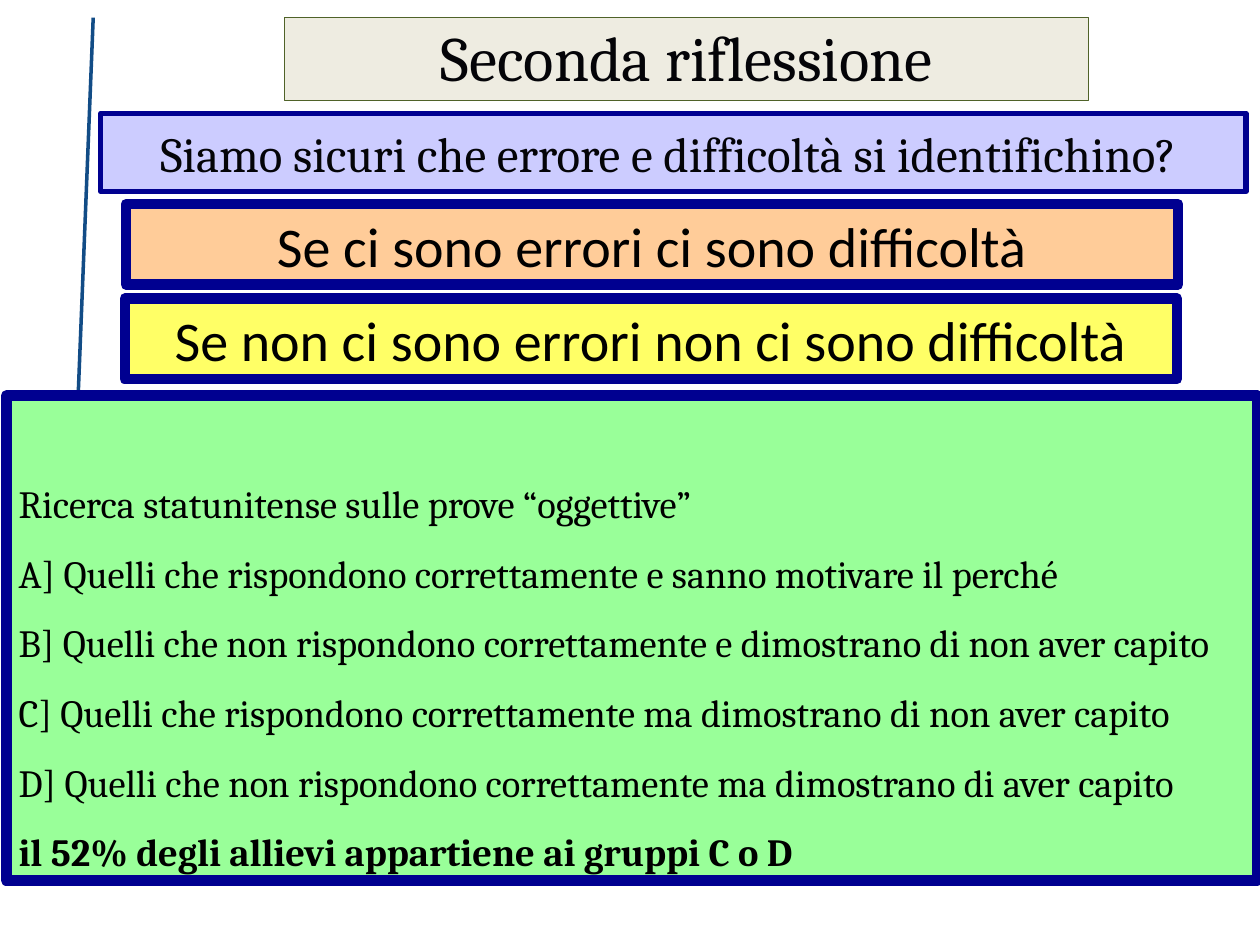
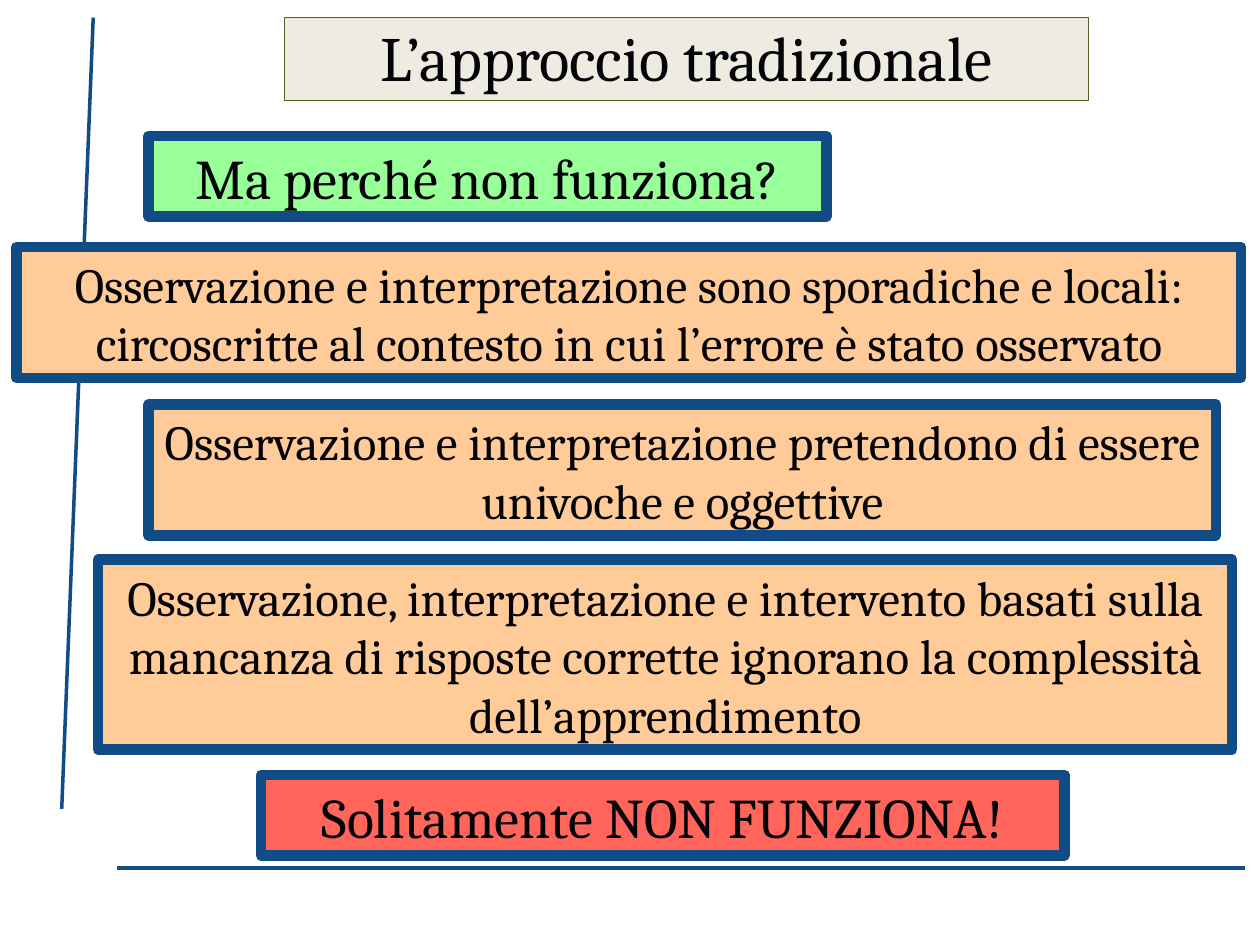
"""Build two slides on errors, difficulties and the traditional approach."""
from lxml import etree
from pptx import Presentation
from pptx.dml.color import RGBColor
from pptx.enum.shapes import MSO_CONNECTOR, MSO_SHAPE
from pptx.enum.text import MSO_ANCHOR, MSO_AUTO_SIZE, PP_ALIGN
from pptx.oxml.ns import qn
from pptx.util import Inches, Pt

RECT, STRAIGHT = MSO_SHAPE.RECTANGLE, MSO_CONNECTOR.STRAIGHT
BOTTOM, MIDDLE = MSO_ANCHOR.BOTTOM, MSO_ANCHOR.MIDDLE
LEFT, CENTER = PP_ALIGN.LEFT, PP_ALIGN.CENTER
NO_FIT = MSO_AUTO_SIZE.NONE

INK, BLACK = "040408", "000000"
NAVY, BLUE, OLIVE = "000090", "124C86", "4F6228"
CREAM, LILAC, PEACH = "EEECE1", "CCCCFF", "FFCC99"
YELLOW, GREEN, RED = "FFFF66", "99FF99", "FF655B"
SERIF, SANS = "Cambria", "Calibri"

TITLE_AT = (2.26, 0.14, 6.38, 0.66)
SIDE_RULE = (0.74, 0.14, 0.49, 6.42)
BASE_RULE = (9.88, 6.89, 0.93, 6.89)

RESEARCH = [
    "Ricerca statunitense sulle prove “oggettive”",
    "A] Quelli che rispondono correttamente e sanno motivare il perché",
    "B] Quelli che non rispondono correttamente e dimostrano di non aver capito",
    "C] Quelli che rispondono correttamente ma dimostrano di non aver capito",
    "D] Quelli che non rispondono correttamente ma dimostrano di aver capito",
    "il 52% degli allievi appartiene ai gruppi C o D",
]

SLIDES = [
    dict(title="Seconda riflessione", rules=[SIDE_RULE], edge=NAVY, boxes=[
        dict(at=(0.8, 0.9, 9.09, 0.62), fill=LILAC, size=28, weight=3, anchor=MIDDLE,
             lines=["Siamo sicuri che errore e difficoltà si identifichino? "]),
        dict(at=(1, 1.62, 8.35, 0.64), fill=PEACH, size=32, font=SANS, color=BLACK,
             lines=["Se ci sono errori ci sono difficoltà"]),
        dict(at=(0.99, 2.37, 8.35, 0.64), fill=YELLOW, size=32, font=SANS, color=BLACK,
             lines=["Se non ci sono errori non ci sono difficoltà"]),
        dict(at=(0.05, 3.14, 9.93, 3.85), fill=GREEN, size=22, color=BLACK,
             align=LEFT, leading=28.8, bold_last=True, lines=RESEARCH),
    ]),
    dict(title="L’approccio tradizionale", rules=[SIDE_RULE, BASE_RULE], edge=BLUE, boxes=[
        dict(at=(1.18, 1.08, 5.38, 0.64), fill=GREEN, size=32,
             lines=["Ma perché non funziona?"]),
        dict(at=(0.13, 1.96, 9.72, 1.04), fill=PEACH, size=28,
             lines=["Osservazione e interpretazione sono sporadiche e locali: "
                    "circoscritte al contesto in cui l’errore è stato osservato"]),
        dict(at=(1.18, 3.21, 8.47, 1.04), fill=PEACH, size=28,
             lines=["Osservazione e interpretazione pretendono di essere "
                    "univoche e oggettive"]),
        dict(at=(0.78, 4.44, 9, 1.51), fill=PEACH, size=28,
             lines=["Osservazione, interpretazione e intervento basati sulla "
                    "mancanza di risposte corrette ignorano la complessità "
                    "dell’apprendimento"]),
        dict(at=(2.07, 6.15, 6.38, 0.64), fill=RED, size=32,
             lines=["Solitamente NON FUNZIONA!"]),
    ]),
]


def rgb(value):
    """Turn a hex string into a colour."""
    return RGBColor.from_string(value)


def add_rule(s, ends):
    """Draw a thin blue rule without a shadow."""
    sp = s.shapes.add_connector(STRAIGHT, *map(Inches, ends))
    sp.line.color.rgb = rgb(BLUE)
    sp.line.width = Pt(2)
    etree.SubElement(sp._element.spPr, qn("a:effectLst"))


def style_panel(sp, fill, edge, weight):
    """Give a shape its fill and outline."""
    sp.fill.solid()
    sp.fill.fore_color.rgb = rgb(fill)
    sp.line.color.rgb = rgb(edge)
    sp.line.width = Pt(weight)


def write(sp, lines, size, font=SERIF, color=INK, align=CENTER, anchor=BOTTOM,
          leading=None, bold_last=False):
    """Write one paragraph per line in a shape."""
    tf = sp.text_frame
    tf.word_wrap = True
    tf.auto_size = NO_FIT
    tf.vertical_anchor = anchor
    for i, line in enumerate(lines):
        p = tf.add_paragraph() if i else tf.paragraphs[0]
        p.alignment = align
        if leading:
            p.line_spacing = Pt(leading)
            p.space_before = Pt(size / 2)
        r = p.add_run()
        r.text = line
        r.font.size = Pt(size)
        r.font.name = font
        r.font.color.rgb = rgb(color)
        r.font.bold = bold_last and i == len(lines) - 1


def add_title(s, text):
    """Place and format the title band."""
    sp = s.shapes.title
    sp.left, sp.top, sp.width, sp.height = map(Inches, TITLE_AT)
    style_panel(sp, CREAM, OLIVE, 0.75)
    write(sp, [text], 36)


def add_box(s, edge, at, fill, weight=6, **text):
    """Add a framed box with its text."""
    sp = s.shapes.add_shape(RECT, *map(Inches, at))
    sp.shadow.inherit = False
    style_panel(sp, fill, edge, weight)
    write(sp, **text)


def main():
    """Build and save the presentation."""
    prs = Presentation()
    prs.slide_width, prs.slide_height = Inches(10), Inches(7.5)
    for page in SLIDES:
        s = prs.slides.add_slide(prs.slide_layouts[5])
        add_title(s, page["title"])
        for ends in page["rules"]:
            add_rule(s, ends)
        for box in page["boxes"]:
            add_box(s, page["edge"], **box)
    prs.save("out.pptx")


if __name__ == "__main__":
    main()
